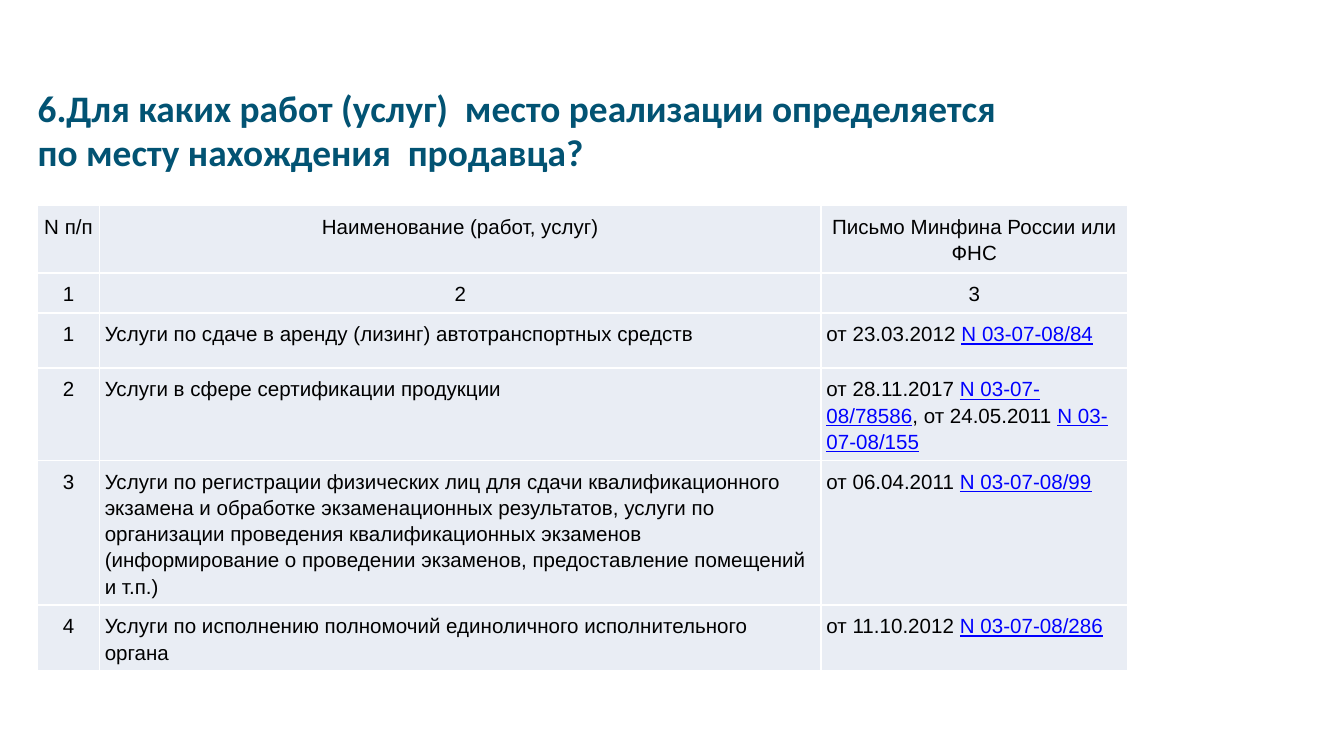
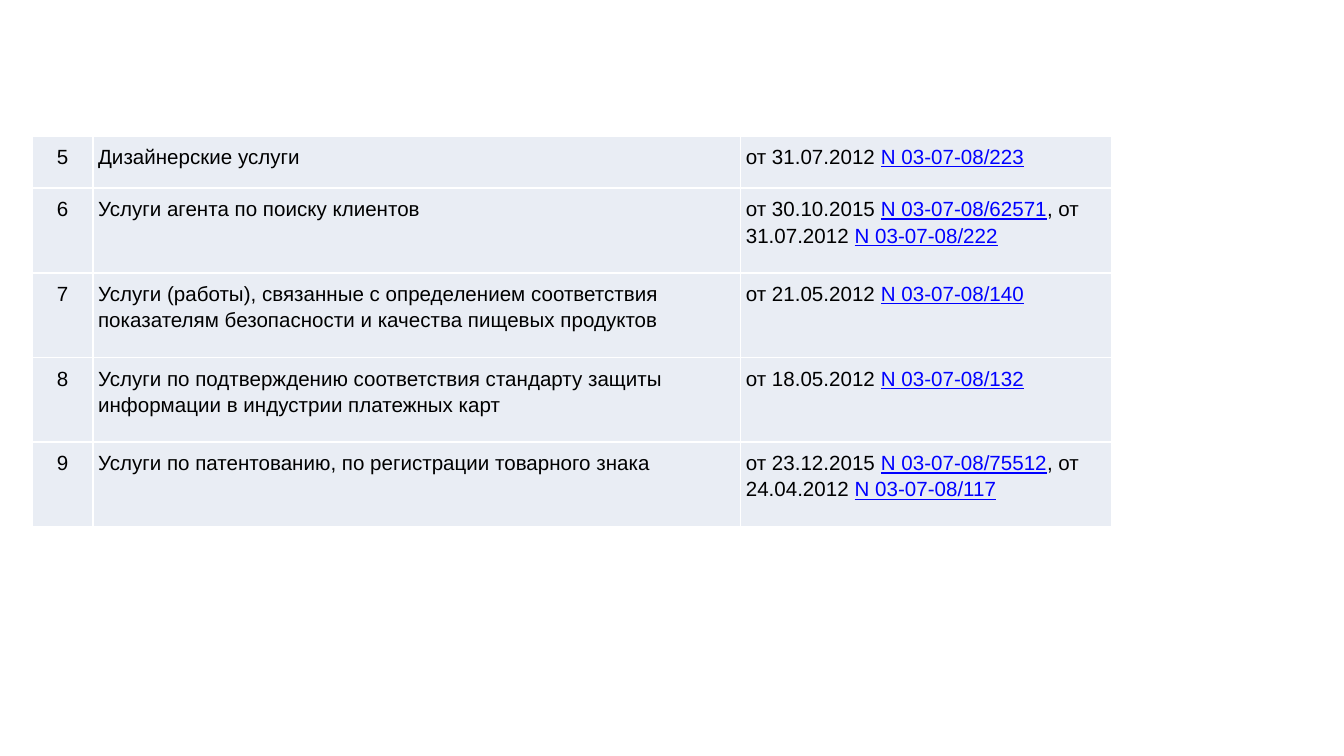
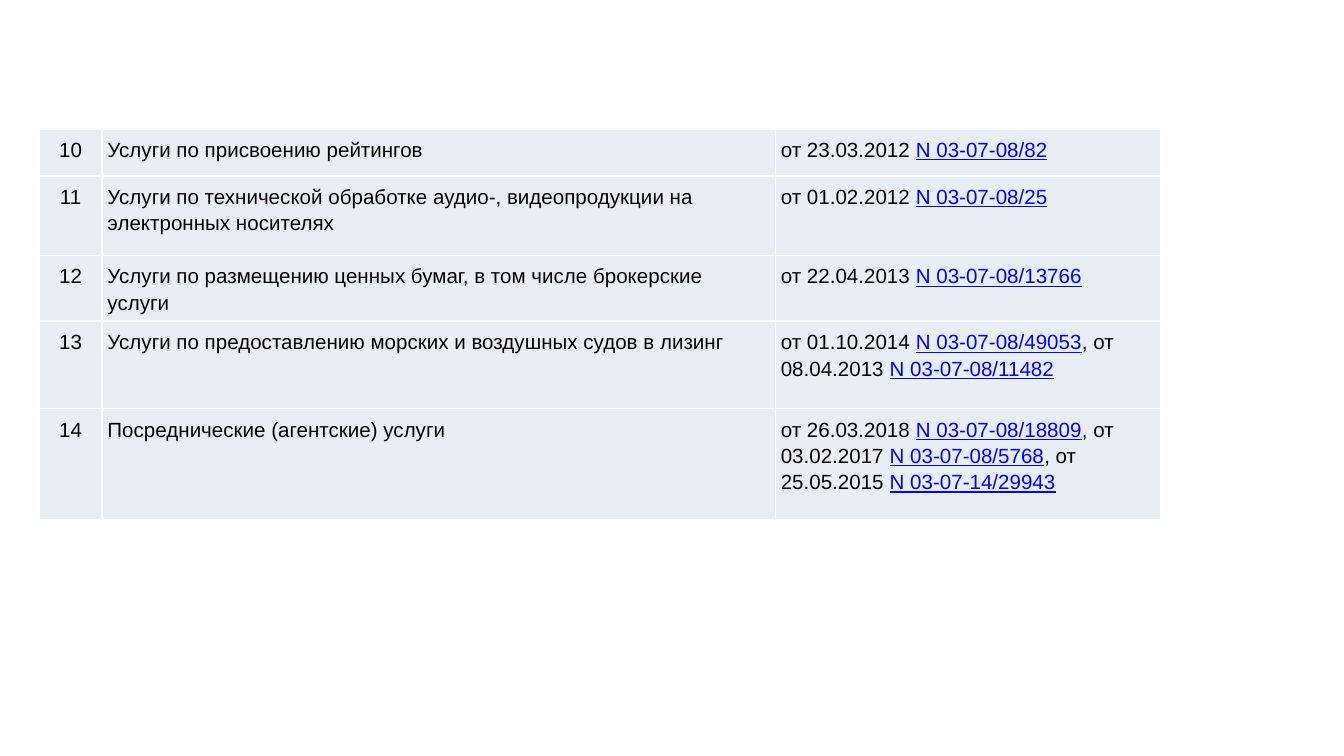
import lxml.etree
import pptx
import pptx.dml.color
import pptx.enum.text
import pptx.oxml.ns
import pptx.util

Inches = pptx.util.Inches
Pt = pptx.util.Pt
ALIGN = pptx.enum.text.PP_ALIGN

TITLE_COLOR = "025373"
TEXT_COLOR = "000000"
LINK_COLOR = "0000FF"
CELL_COLOR = "E9EDF4"
BORDER_COLOR = "FFFFFF"

HEADER_ROWS = 2

SLIDES = [
    {
        "title": "6.Для каких работ (услуг)  место реализации определяется по месту нахождения  продавца?",
        "origin": (0.28, 1.53),
        "columns": (0.46, 5.37, 2.28),
        "heights": (0.5, 0.3, 0.41, 0.57, 1.03, 0.41),
        "rows": [
            ("N п/п", "Наименование (работ, услуг)", "Письмо Минфина России или ФНС"),
            ("1", "2", "3"),
            ("1", "Услуги по сдаче в аренду (лизинг) автотранспортных средств",
             [("23.03.2012", "03-07-08/84")]),
            ("2", "Услуги в сфере сертификации продукции",
             [("28.11.2017", "03-07-08/78586"), ("24.05.2011", "03-07-08/155")]),
            ("3", "Услуги по регистрации физических лиц для сдачи квалификационного экзамена "
                  "и обработке экзаменационных результатов, услуги по организации проведения "
                  "квалификационных экзаменов (информирование о проведении экзаменов, "
                  "предоставление помещений и т.п.)",
             [("06.04.2011", "03-07-08/99")]),
            ("4", "Услуги по исполнению полномочий единоличного исполнительного органа",
             [("11.10.2012", "03-07-08/286")]),
        ],
    },
    {
        "origin": (0.24, 1.01),
        "columns": (0.45, 4.82, 2.76),
        "heights": (0.39, 0.63, 0.63, 0.63, 0.63),
        "rows": [
            ("5", "Дизайнерские услуги", [("31.07.2012", "03-07-08/223")]),
            ("6", "Услуги агента по поиску клиентов",
             [("30.10.2015", "03-07-08/62571"), ("31.07.2012", "03-07-08/222")]),
            ("7", "Услуги (работы), связанные с определением соответствия показателям "
                  "безопасности и качества пищевых продуктов",
             [("21.05.2012", "03-07-08/140")]),
            ("8", "Услуги по подтверждению соответствия стандарту защиты информации "
                  "в индустрии платежных карт",
             [("18.05.2012", "03-07-08/132")]),
            ("9", "Услуги по патентованию, по регистрации товарного знака",
             [("23.12.2015", "03-07-08/75512"), ("24.04.2012", "03-07-08/117")]),
        ],
    },
    {
        "origin": (0.29, 0.96),
        "columns": (0.47, 5.01, 2.87),
        "heights": (0.35, 0.59, 0.47, 0.65, 0.83),
        "rows": [
            ("10", "Услуги по присвоению рейтингов", [("23.03.2012", "03-07-08/82")]),
            ("11", "Услуги по технической обработке аудио-, видеопродукции на электронных носителях",
             [("01.02.2012", "03-07-08/25")]),
            ("12", "Услуги по размещению ценных бумаг, в том числе брокерские услуги",
             [("22.04.2013", "03-07-08/13766")]),
            ("13", "Услуги по предоставлению морских и воздушных судов в лизинг",
             [("01.10.2014", "03-07-08/49053"), ("08.04.2013", "03-07-08/11482")]),
            ("14", "Посреднические (агентские) услуги",
             [("26.03.2018", "03-07-08/18809"), ("03.02.2017", "03-07-08/5768"),
              ("25.05.2015", "03-07-14/29943")]),
        ],
    },
]


def rgb(color):
    return pptx.dml.color.RGBColor.from_string(color)


def style_run(r, font, size, color, bold=False, underline=False):
    r.font.name = font
    r.font.size = Pt(size)
    r.font.color.rgb = rgb(color)
    r.font.bold = bold
    r.font.underline = underline


def add_title(s, text):
    sp = s.shapes.title
    sp.left, sp.top, sp.width, sp.height = map(Inches, (0.18, 0.63, 7.68, 0.94))
    tf = sp.text_frame
    tf.text = text
    tf.word_wrap = True
    tf.auto_size = pptx.enum.text.MSO_AUTO_SIZE.NONE
    tf.vertical_anchor = pptx.enum.text.MSO_ANCHOR.TOP
    tf.margin_top = 0
    tf.margin_right = Inches(0.2)
    p = tf.paragraphs[0]
    p.alignment = ALIGN.LEFT
    p.space_after = Pt(4.5)
    style_run(p.runs[0], "Calibri", 20, TITLE_COLOR, bold=True)


def add_borders(cell):
    tcPr = cell._tc.get_or_add_tcPr()
    qn = pptx.oxml.ns.qn
    for side in ("a:lnL", "a:lnR", "a:lnT", "a:lnB"):
        ln = lxml.etree.SubElement(tcPr, qn(side), w=str(Pt(1)))
        fill = lxml.etree.SubElement(ln, qn("a:solidFill"))
        lxml.etree.SubElement(fill, qn("a:srgbClr"), val=BORDER_COLOR)


def letter_parts(letters):
    parts = []
    for i, (date, number) in enumerate(letters):
        lead = ", " if i else ""
        parts += [(f"{lead}от {date} ", False), (f"N {number}", True)]
    return parts


def fill_cell(cell, content, centered):
    cell.margin_left = cell.margin_right = Inches(0.04)
    cell.margin_top = cell.margin_bottom = Inches(0.05)
    add_borders(cell)
    cell.fill.solid()
    cell.fill.fore_color.rgb = rgb(CELL_COLOR)
    p = cell.text_frame.paragraphs[0]
    p.alignment = ALIGN.CENTER if centered else ALIGN.LEFT
    p.line_spacing = 1.15
    parts = [(content, False)] if isinstance(content, str) else letter_parts(content)
    for text, is_link in parts:
        r = p.add_run()
        r.text = text
        style_run(r, "Arial", 11, LINK_COLOR if is_link else TEXT_COLOR, underline=is_link)


def add_letters_table(s, data):
    rows, columns, heights = data["rows"], data["columns"], data["heights"]
    left, top = data["origin"]
    table = s.shapes.add_table(len(rows), len(columns), Inches(left), Inches(top),
                               Inches(sum(columns)), Inches(sum(heights))).table
    table.first_row = table.horz_banding = False
    for column, width in zip(table.columns, columns):
        column.width = Inches(width)
    header_rows = HEADER_ROWS if "title" in data else 0
    for i, (row, height) in enumerate(zip(rows, heights)):
        table.rows[i].height = Inches(height)
        for j, content in enumerate(row):
            fill_cell(table.cell(i, j), content, j == 0 or i < header_rows)


def main():
    prs = pptx.Presentation()
    prs.slide_width = Inches(10)
    prs.slide_height = prs.slide_width * 9 // 16
    title_only, blank = prs.slide_layouts[5], prs.slide_layouts[6]
    for data in SLIDES:
        has_title = "title" in data
        s = prs.slides.add_slide(title_only if has_title else blank)
        if has_title:
            add_title(s, data["title"])
        add_letters_table(s, data)
    prs.save("out.pptx")


if __name__ == "__main__":
    main()
